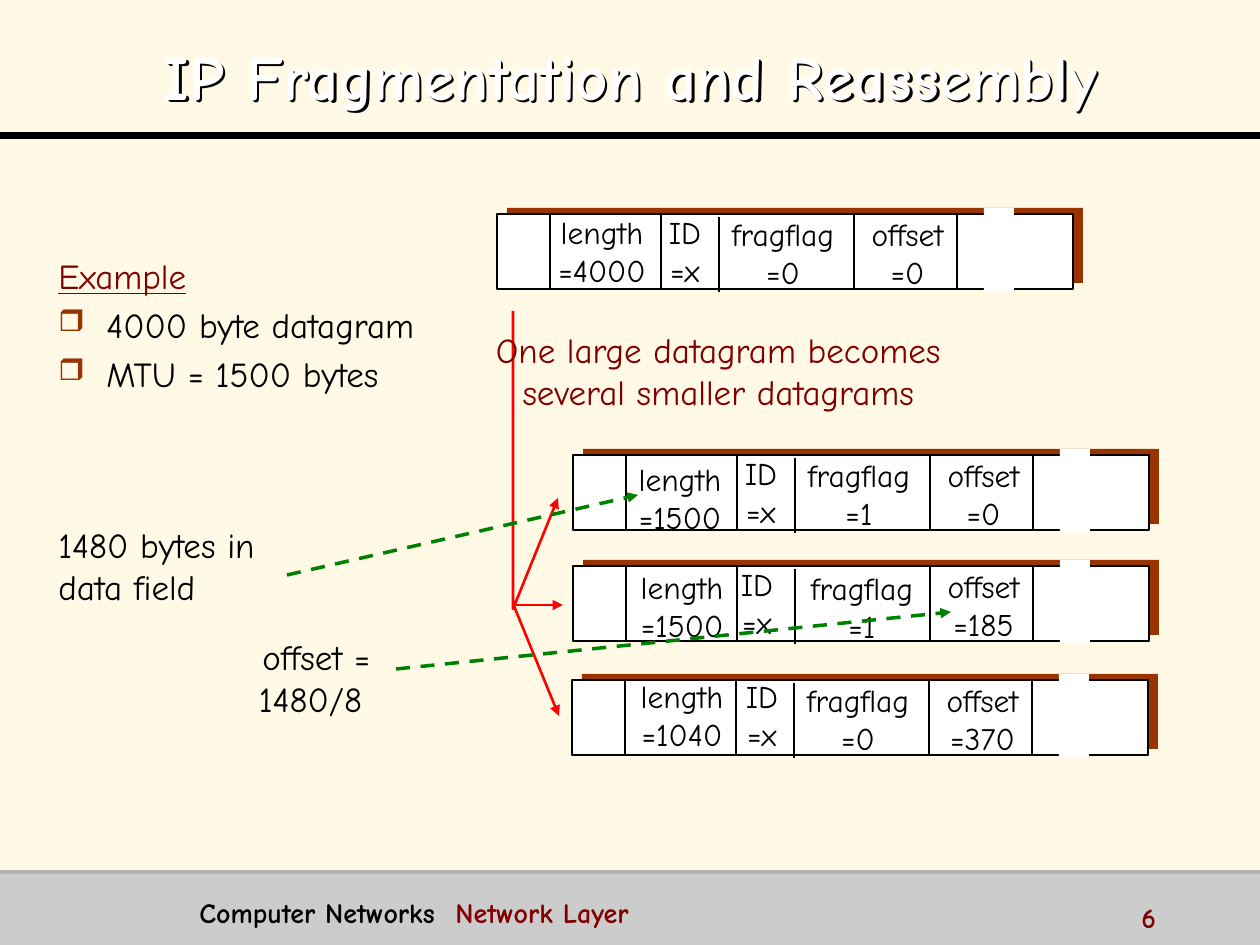
from lxml import etree
from pptx import Presentation
from pptx import util as u
from pptx.dml.color import RGBColor
from pptx.enum import dml, shapes, text
from pptx.oxml import ns

SCALE = 914400 / 126
FONT = "Comic Neue"
CREAM = RGBColor(0xFF, 0xF9, 0xE6)
WHITE = RGBColor(0xFF, 0xFF, 0xFF)
BLACK = RGBColor(0x00, 0x00, 0x00)
SILVER = RGBColor(0xCC, 0xCC, 0xCC)
GREY = RGBColor(0xB2, 0xB2, 0xB2)
BROWN = RGBColor(0x99, 0x33, 0x00)
MAROON = RGBColor(0x80, 0x00, 0x00)
RED = RGBColor(0xFF, 0x00, 0x00)
GREEN = RGBColor(0x00, 0x80, 0x00)

ROW_W, ROW_H = 576, 75
FIELDS = {
    "length": (49, -7, 120),
    "ID": (155, -7, 66),
    "fragflag": (213, -5, 146),
    "offset": (350, -5, 121),
}
DIVIDERS = ((53, 0), (164, 0), (222, 3), (357, 0), (460, 0))
DATAGRAMS = (
    (497, 214, ("=4000", "=x", "=0", "=0"), {"length": (-4, 0)}),
    (573, 455, ("=1500", "=x", "=1", "=0"), {"length": (-2, 6)}),
    (573, 566, ("=1500", "=x", "=1", "=185"),
     {"length": (0, 3), "ID": (-4, 0), "fragflag": (3, 2)}),
    (572, 680, ("=1040", "=x", "=0", "=370"),
     {"length": (1, -2), "ID": (2, -2)}),
)


def px(*lengths):
    """Turn pixel lengths into EMU."""
    return [u.Emu(round(length * SCALE)) for length in lengths]


def add_child(parent, tag, **attributes):
    """Append a DrawingML element to a parent."""
    return etree.SubElement(parent, ns.qn(tag), attributes)


def add_rect(slide, box, fill, outline=None):
    """Draw a flat rectangle, outlined on request."""
    rect = slide.shapes.add_shape(shapes.MSO_SHAPE.RECTANGLE, *px(*box))
    rect.shadow.inherit = False
    rect.fill.solid()
    rect.fill.fore_color.rgb = fill
    if outline is None:
        rect.line.fill.background()
    else:
        style_line(rect.line, outline, 1.5)


def style_line(line, color, width, dashed=False, arrow=False):
    """Give a line its colour, width, dash and arrowhead."""
    line.color.rgb = color
    line.width = u.Pt(width)
    if dashed:
        line.dash_style = dml.MSO_LINE.DASH
    if arrow:
        add_child(line._get_or_add_ln(), "a:tailEnd", type="triangle")


def add_line(slide, ends, color, width=1.5, **style):
    """Draw a straight line between two points."""
    connector = slide.shapes.add_connector(
        shapes.MSO_CONNECTOR.STRAIGHT, *px(*ends))
    style_line(connector.line, color, width, **style)
    add_child(connector._element.spPr, "a:effectLst")


def add_text(slide, box, lines, size=20, color=BLACK, bold=None,
             align=text.PP_ALIGN.LEFT, wrap=True):
    """Write lines of text as paragraphs and return their box."""
    label = slide.shapes.add_textbox(*px(*box))
    frame = label.text_frame
    frame.word_wrap = wrap
    if not wrap:
        frame.auto_size = text.MSO_AUTO_SIZE.SHAPE_TO_FIT_TEXT
    frame.text = "\n".join(lines)
    formats = {"name": FONT, "size": u.Pt(size), "bold": bold}
    for paragraph in frame.paragraphs:
        paragraph.alignment = align
        for run in paragraph.runs:
            run.font.color.rgb = color
            for name, value in formats.items():
                setattr(run.font, name, value)
    return label


def add_title(slide):
    """Write the white title with its black shadow."""
    title = add_text(slide, (25, 16, 1211, 110),
                     ["IP Fragmentation and Reassembly"], 36, WHITE, True,
                     text.PP_ALIGN.CENTER)
    title.text_frame.vertical_anchor = text.MSO_ANCHOR.MIDDLE
    title.text_frame.paragraphs[0].line_spacing = 1.1
    effects = add_child(title._element.spPr, "a:effectLst")
    shadow = add_child(effects, "a:outerShdw", blurRad="0", dist="25400",
                       dir="2700000", algn="tl", rotWithShape="0")
    add_child(shadow, "a:srgbClr", val=str(BLACK))


def add_example(slide):
    """Write the example heading and its bulleted facts."""
    example = add_text(slide, (46, 248, 391, 232),
                       ["Example", "4000 byte datagram", "MTU = 1500 bytes"])
    heading, *facts = example.text_frame.paragraphs
    heading.runs[0].font.underline = True
    heading.runs[0].font.color.rgb = MAROON
    indent = px(48)[0]
    for fact in facts:
        fact.space_before = u.Pt(4)
        properties = fact._p.get_or_add_pPr()
        properties.set("marL", str(indent))
        properties.set("indent", str(-indent))
        color = add_child(properties, "a:buClr")
        add_child(color, "a:srgbClr", val=str(BROWN))
        add_child(properties, "a:buSzPct", val="85000")
        add_child(properties, "a:buChar", char="❒")


def add_datagram(slide, left, top, values, nudges):
    """Draw one datagram with its header fields and broken data part."""
    add_rect(slide, (left + 10, top - 6, ROW_W, ROW_H), BROWN)
    add_rect(slide, (left, top, ROW_W, ROW_H), WHITE, BLACK)
    for x, drop in DIVIDERS:
        add_line(slide, (left + x, top + drop,
                         left + x, top + drop + ROW_H), BLACK)
    add_rect(slide, (left + 487, top - 6, 30, 83), WHITE)
    for (field, (x, y, width)), value in zip(FIELDS.items(), values):
        dx, dy = nudges.get(field, (0, 0))
        add_text(slide, (left + x + dx, top + y + dy, width, 88),
                 [field, value], 18, align=text.PP_ALIGN.CENTER,
                 wrap=field == "length")


def add_split_arrows(slide):
    """Draw the red arrows from the large datagram to its fragments."""
    builder = slide.shapes.build_freeform(513, 311, scale=SCALE)
    builder.add_line_segments([(513, 609), (558, 498)], close=False)
    trunk = builder.convert_to_shape()
    trunk.shadow.inherit = False
    trunk.fill.background()
    style_line(trunk.line, RED, 1.5, arrow=True)
    for ends in ((513, 605, 563, 605), (514, 606, 559, 716)):
        add_line(slide, ends, RED, arrow=True)


def add_notes_on_fields(slide):
    """Write the remarks and point two of them at header fields."""
    center = text.PP_ALIGN.CENTER
    add_text(slide, (467, 322, 503, 97),
             ["One large datagram becomes", "several smaller datagrams"],
             color=MAROON, align=center, wrap=False)
    add_text(slide, (46, 517, 267, 97), ["1480 bytes in\vdata field"])
    add_text(slide, (236, 629, 161, 97), ["offset =", "1480/8 "],
             align=center, wrap=False)
    for ends in ((287, 575, 638, 495), (396, 669, 951, 612)):
        add_line(slide, ends, GREEN, 2, dashed=True, arrow=True)


def add_footer(slide):
    """Draw the footer band with course, chapter and page number."""
    add_rect(slide, (0, 872, 1260, 73), SILVER)
    add_line(slide, (0, 872, 1260, 872), GREY, 2)
    for box, label, color in (
            ((187, 889, 268, 39), "Computer Networks", BLACK),
            ((443, 889, 652, 39), "Network Layer", MAROON),
            ((1129, 894, 126, 32), "6", MAROON)):
        add_text(slide, box, [label], 16, color, True)


def main():
    """Build the slide and save it."""
    deck = Presentation()
    deck.slide_width, deck.slide_height = px(1260, 945)
    slide = deck.slides.add_slide(deck.slide_layouts[6])
    slide.background.fill.solid()
    slide.background.fill.fore_color.rgb = CREAM
    add_footer(slide)
    add_line(slide, (0, 136, 1260, 136), BLACK, 4)
    add_title(slide)
    for datagram in DATAGRAMS:
        add_datagram(slide, *datagram)
    add_split_arrows(slide)
    add_example(slide)
    add_notes_on_fields(slide)
    deck.save("out.pptx")


if __name__ == "__main__":
    main()
